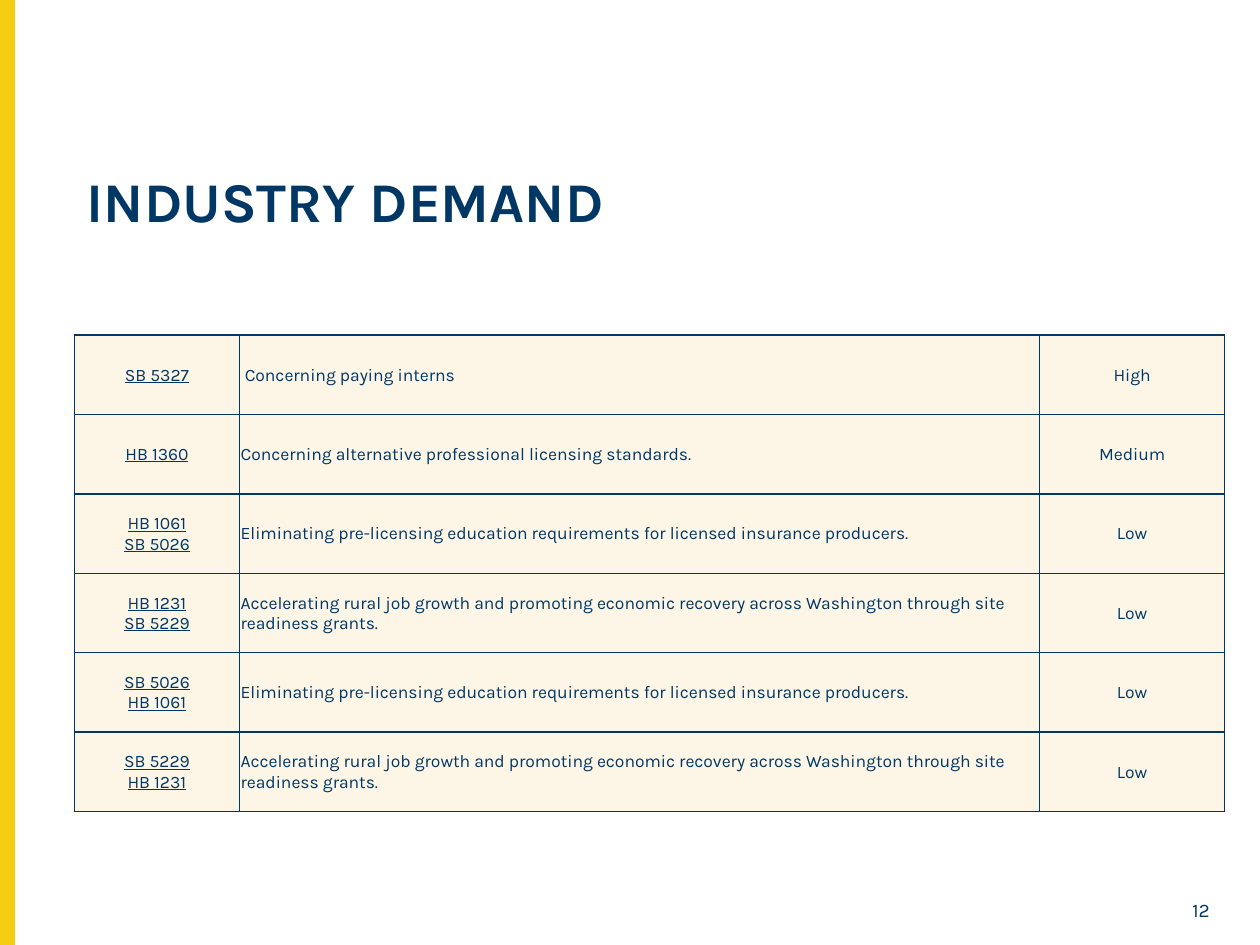
from dataclasses import dataclass

from lxml import etree
from pptx import Presentation
from pptx import util as u
from pptx.dml.color import RGBColor
from pptx.enum import shapes, text
from pptx.oxml import ns


@dataclass(frozen=True)
class Theme:
    font: str = "Karla"
    navy: str = "003764"
    gold: str = "F4CE12"
    cream: str = "FDF6E7"
    title: int = 32
    body: int = 10
    number: int = 11


theme = Theme()
MIDDLE = text.MSO_ANCHOR.MIDDLE
CENTER, LEFT, RIGHT = text.PP_ALIGN.CENTER, text.PP_ALIGN.LEFT, text.PP_ALIGN.RIGHT


def write(tf, lines, size, align, **extra):
    tf.word_wrap = True
    tf.vertical_anchor = MIDDLE
    for i, line in enumerate(lines):
        p = tf.paragraphs[0] if i == 0 else tf.add_paragraph()
        p.alignment = align
        r = p.add_run()
        r.text = line
        for name, value in {"name": theme.font, "size": u.Pt(size), **extra}.items():
            setattr(r.font, name, value)
        r.font.color.rgb = RGBColor.from_string(theme.navy)


def add_borders(cell):
    tc_pr = cell._tc.get_or_add_tcPr()
    for i, side in enumerate(("a:lnL", "a:lnR", "a:lnT", "a:lnB")):
        ln = etree.Element(ns.qn(side), w=str(u.Pt(1)))
        fill = etree.SubElement(ln, ns.qn("a:solidFill"))
        etree.SubElement(fill, ns.qn("a:srgbClr"), val=theme.navy)
        tc_pr.insert(i, ln)


prs = Presentation()
prs.slide_width, prs.slide_height = u.Inches(10), u.Inches(7.5)
s = prs.slides.add_slide(prs.slide_layouts[5])

bar = s.shapes.add_shape(shapes.MSO_SHAPE.RECTANGLE, 0, 0, u.Inches(0.11), prs.slide_height)
bar.shadow.inherit = False
bar.fill.solid()
bar.fill.fore_color.rgb = RGBColor.from_string(theme.gold)
bar.line.color.rgb = RGBColor.from_string(theme.gold)
bar.line.width = u.Pt(1)

title = s.shapes.title
title.left, title.top = u.Inches(0.59), u.Inches(1.36)
title.width, title.height = u.Inches(9.12), u.Inches(0.53)
write(title.text_frame, ["INDUSTRY DEMAND"], theme.title, LEFT, bold=True)
title.text_frame.auto_size = text.MSO_AUTO_SIZE.NONE
title.text_frame.paragraphs[0].line_spacing = 0.9

number = s.shapes.add_textbox(u.Inches(9.19), u.Inches(7.09), u.Inches(0.51), u.Inches(0.26))
write(number.text_frame, ["12"], theme.number, RIGHT)

licensing = "Eliminating pre-licensing education requirements for licensed insurance producers."
rural = ("Accelerating rural job growth and promoting economic recovery across Washington "
         "through site readiness grants.")
bills = [
    (["SB 5327"], " Concerning paying interns", "High"),
    (["HB 1360"], "Concerning alternative professional licensing standards.", "Medium"),
    (["HB 1061", "SB 5026"], licensing, "Low"),
    (["HB 1231", "SB 5229"], rural, "Low"),
    (["SB 5026", "HB 1061"], licensing, "Low"),
    (["SB 5229", "HB 1231"], rural, "Low"),
]
widths = [1.31, 6.35, 1.47]
row_height = 0.63
table = s.shapes.add_table(len(bills), len(widths), u.Inches(0.59), u.Inches(2.66),
                           u.Inches(sum(widths)), u.Inches(row_height * len(bills))).table
table.first_row = table.horz_banding = False
for column, width in zip(table.columns, widths):
    column.width = u.Inches(width)

margins = {"margin_left": 0.01, "margin_right": 0.01, "margin_top": 0.01, "margin_bottom": 0}
for row, (numbers, subject, demand) in zip(table.rows, bills):
    row.height = u.Inches(row_height)
    columns = [(numbers, CENTER, True), ([subject], LEFT, False), ([demand], CENTER, False)]
    for cell, (lines, align, underline) in zip(row.cells, columns):
        write(cell.text_frame, lines, theme.body, align, underline=underline)
        cell.vertical_anchor = MIDDLE
        for name, value in margins.items():
            setattr(cell, name, u.Inches(value))
        cell.fill.solid()
        cell.fill.fore_color.rgb = RGBColor.from_string(theme.cream)
        add_borders(cell)

prs.save("out.pptx")
